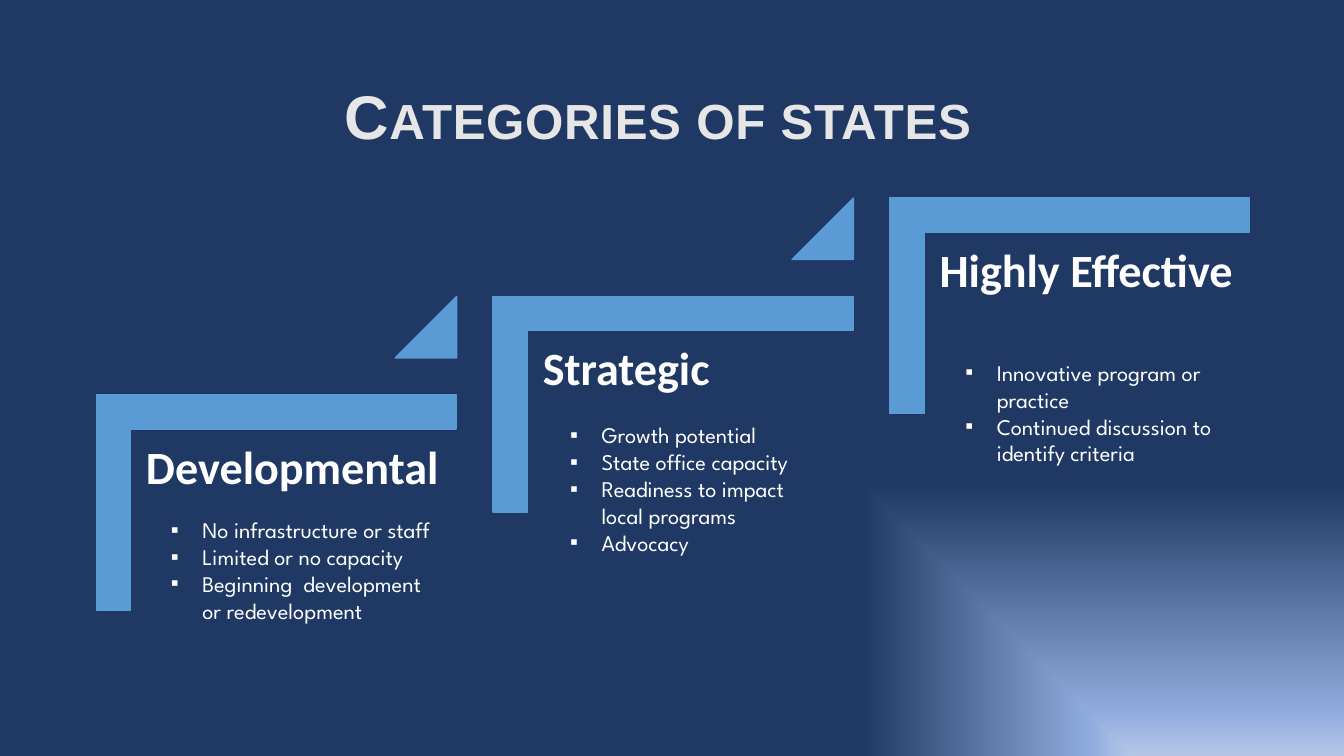
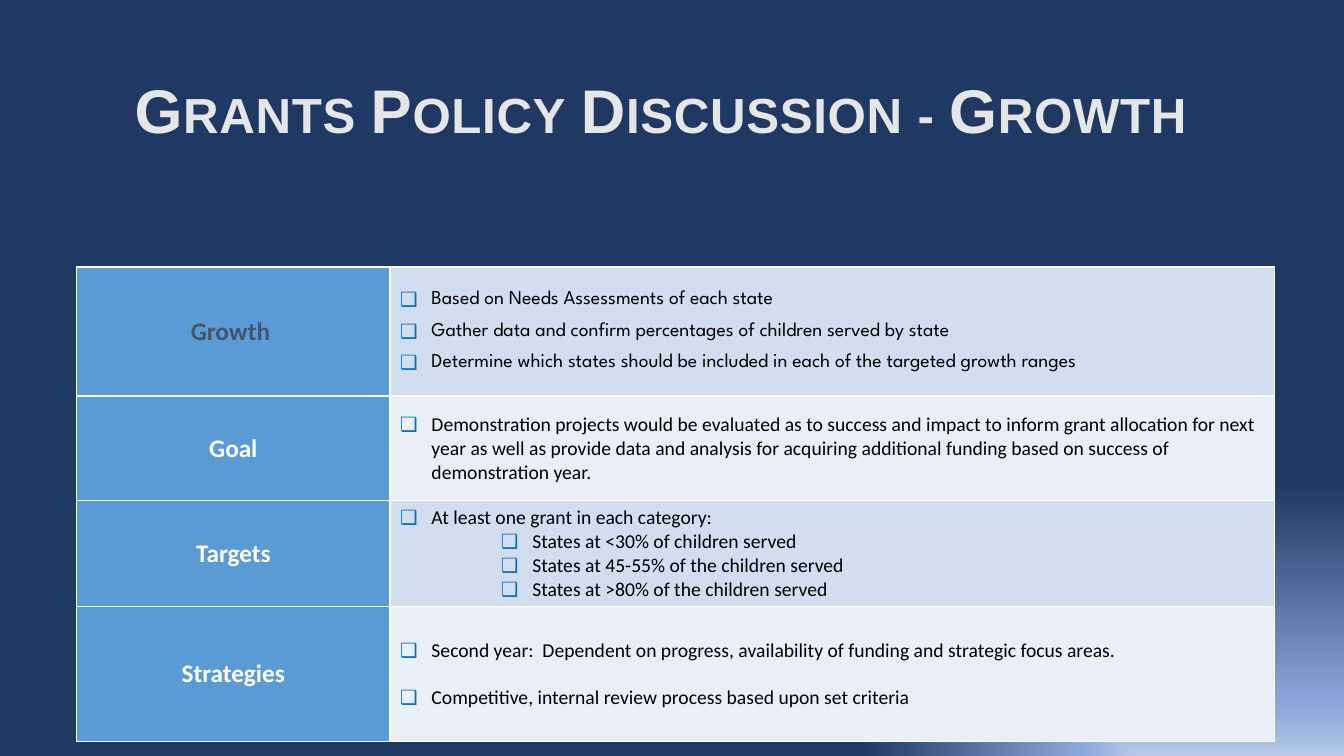
from lxml import etree
from pptx import Presentation
from pptx.dml.color import RGBColor
from pptx.enum.shapes import MSO_SHAPE
from pptx.enum.text import MSO_ANCHOR, MSO_AUTO_SIZE, PP_ALIGN
from pptx.oxml import parse_xml
from pptx.oxml.ns import nsdecls, qn
from pptx.util import Cm, Pt

CORNER = MSO_SHAPE.CORNER
TRIANGLE = MSO_SHAPE.ISOSCELES_TRIANGLE
CENTER = PP_ALIGN.CENTER
MIDDLE = MSO_ANCHOR.MIDDLE
FIT_NONE = MSO_AUTO_SIZE.NONE
FIT_SHAPE = MSO_AUTO_SIZE.SHAPE_TO_FIT_TEXT

COLORS = {
    "navy": "203864",
    "periwinkle": "8FAADC",
    "pale": "B4C7E7",
    "blue": "5B9BD5",
    "title": "E7E6E6",
    "white": "FFFFFF",
    "black": "000000",
    "slate": "44546A",
    "bullet": "0070C0",
    "band_dark": "D2DEEF",
    "band_light": "EAEFF7",
}
TITLE_FONT, HEADING_FONT, LIST_FONT = "Arial", "Calibri", "League Spartan"
HANGING = 0.79


def add_span(para, text, font, size, color, bold=False):
    span = para.add_run()
    span.text = text
    span.font.name = font
    span.font.size = Pt(size)
    span.font.bold = bold
    span.font.color.rgb = RGBColor.from_string(COLORS[color])
    return span


def set_bullet(para, symbol, left=HANGING, color=None):
    """Give the paragraph a hanging bullet whose text starts at left (cm)."""
    properties = para._p.get_or_add_pPr()
    properties.set("marL", str(Cm(left)))
    properties.set("indent", str(-Cm(HANGING)))
    if color:
        bullet_color = etree.SubElement(properties, qn("a:buClr"))
        etree.SubElement(bullet_color, qn("a:srgbClr"), val=COLORS[color])
    etree.SubElement(properties, qn("a:buFont"), typeface="Arial")
    etree.SubElement(properties, qn("a:buChar"), char=symbol)


deck = Presentation()
deck.slide_width, deck.slide_height = Cm(33.87), Cm(19.05)

# Shared background: a glow in the bottom right corner
background_fill = deck.slide_master.background.fill
background_fill.gradient()
stops = [(0, "pale"), (12, "periwinkle"), (72, "navy"), (83, "navy"), (100, "navy")]
stop_xml = "".join(
    f'<a:gs pos="{position * 1000}"><a:srgbClr val="{COLORS[color]}"/></a:gs>'
    for position, color in stops
)
gradient = parse_xml(
    f'<a:gradFill {nsdecls("a")} rotWithShape="1"><a:gsLst>{stop_xml}</a:gsLst>'
    '<a:path path="rect"><a:fillToRect l="100000" t="100000"/></a:path>'
    '<a:tileRect r="-100000" b="-100000"/></a:gradFill>'
)
old_gradient = next(deck.slide_master.element.iter(qn("a:gradFill")))
old_gradient.getparent().replace(old_gradient, gradient)

# Slides and titles
slides = []
for text, top, height in [
    ("Categories of states ", 1.45, 3.12),
    ("Grants Policy Discussion - Growth", 1.02, 3.68),
]:
    slide = deck.slides.add_slide(deck.slide_layouts[5])
    title = slide.shapes.title
    title.left, title.top, title.width, title.height = Cm(2.34), Cm(top), Cm(29.21), Cm(height)
    title.text_frame.vertical_anchor = MIDDLE
    title.text_frame.auto_size = FIT_NONE
    para = title.text_frame.paragraphs[0]
    para.alignment = CENTER
    para.line_spacing = 0.9
    span = add_span(para, text, TITLE_FONT, 44, "title", bold=True)
    span.font._element.set("cap", "small")
    span.font._element.set("spc", "50")
    slides.append(slide)
categories_slide, grants_slide = slides

# Slide 1: three rising steps
STEP_RIGHT, STEP_UP = 10, 2.48
steps = [
    ("Developmental", (4.06, 12.88, 7.11, 5.74), [
        "No infrastructure or staff",
        "Limited or no capacity",
        "Beginning  development or redevelopment",
    ]),
    ("Strategic", (14.12, 10.49, 6.93, 4.37), [
        "Growth potential",
        "State office capacity",
        "Readiness to impact local programs",
        "Advocacy",
    ]),
    ("Highly Effective", (24.08, 8.92, 7.24, 3), [
        "Innovative program or practice",
        "Continued discussion to identify criteria",
    ]),
]
for index, (heading, list_place, items) in enumerate(steps):
    left, top = 4.24 + index * STEP_RIGHT, 8.13 - index * STEP_UP
    shapes = categories_slide.shapes

    corner = shapes.add_shape(CORNER, Cm(left), Cm(top), Cm(5.44), Cm(9.07))
    corner.rotation = 90
    corner.adjustments[0] = corner.adjustments[1] = 0.16
    markers = [corner]
    if index < len(steps) - 1:
        triangle = shapes.add_shape(TRIANGLE, Cm(left + 5.72), Cm(top - 0.66), Cm(1.55), Cm(1.55))
        triangle.adjustments[0] = 1
        markers.append(triangle)
    for marker in markers:
        marker.shadow.inherit = False
        marker.fill.solid()
        marker.fill.fore_color.rgb = RGBColor.from_string(COLORS["blue"])
        marker.line.color.rgb = RGBColor.from_string(COLORS["blue"])
        marker.line.width = Pt(1)

    heading_box = shapes.add_textbox(Cm(left - 0.91), Cm(top + 2.72), Cm(8.18), Cm(7.16))
    frame = heading_box.text_frame
    frame.word_wrap = True
    frame.margin_left = frame.margin_right = frame.margin_top = frame.margin_bottom = Cm(0.35)
    frame.paragraphs[0].line_spacing = 0.9
    add_span(frame.paragraphs[0], heading, HEADING_FONT, 33, "white", bold=True)

    list_frame = shapes.add_textbox(*map(Cm, list_place)).text_frame
    list_frame.word_wrap = True
    list_frame.auto_size = FIT_SHAPE
    for number, item in enumerate(items):
        para = list_frame.add_paragraph() if number else list_frame.paragraphs[0]
        set_bullet(para, "▪")
        add_span(para, item, LIST_FONT, 16, "white")

# Slide 2: policy table
# Each row: label, label colour, height, list font, gap between items, (level, text) items
policy_rows = [
    ("Growth ", "slate", 3.25, LIST_FONT, 9.5, [
        (0, "Based on Needs Assessments of each state"),
        (0, "Gather data and confirm percentages of children served by state"),
        (0, "Determine which states should be included in each of the targeted growth ranges"),
    ]),
    ("Goal", "white", 2.64, HEADING_FONT, 0, [
        (0, "Demonstration projects would be evaluated as to success and impact to inform grant "
            "allocation for next year as well as provide data and analysis for acquiring "
            "additional funding based on success of demonstration year."),
    ]),
    ("Targets", "white", 2.67, HEADING_FONT, 0, [
        (0, "At least one grant in each category:"),
        (2, "States at <30% of children served"),
        (2, "States at 45-55% of the children served"),
        (2, "States at >80% of the children served"),
    ]),
    ("Strategies", "white", 3.4, HEADING_FONT, 17, [
        (0, "Second year:  Dependent on progress, availability of funding and strategic focus areas."),
        (0, "Competitive, internal review process based upon set criteria"),
    ]),
]
column_widths = [7.9, 22.28]
table_height = sum(row[2] for row in policy_rows)
table = grants_slide.shapes.add_table(
    len(policy_rows), 2, Cm(1.93), Cm(6.73), Cm(sum(column_widths)), Cm(table_height)
).table
table.first_row = table.horz_banding = False
for column, width in zip(table.columns, column_widths):
    column.width = Cm(width)

for index, (label, label_color, height, font, gap, items) in enumerate(policy_rows):
    table.rows[index].height = Cm(height)
    label_cell, list_cell = table.cell(index, 0), table.cell(index, 1)
    band = "band_light" if index % 2 else "band_dark"
    for cell, color in [(label_cell, "blue"), (list_cell, band)]:
        cell.vertical_anchor = MIDDLE
        for side in ("lnL", "lnR", "lnT", "lnB"):
            border = etree.SubElement(cell._tc.get_or_add_tcPr(), qn(f"a:{side}"), w=str(Pt(1)))
            border_fill = etree.SubElement(border, qn("a:solidFill"))
            etree.SubElement(border_fill, qn("a:srgbClr"), val=COLORS["white"])
        cell.fill.solid()
        cell.fill.fore_color.rgb = RGBColor.from_string(COLORS[color])

    para = label_cell.text_frame.paragraphs[0]
    para.alignment = CENTER
    add_span(para, label, HEADING_FONT, 18, label_color, bold=True)

    for number, (level, item) in enumerate(items):
        frame = list_cell.text_frame
        para = frame.add_paragraph() if number else frame.paragraphs[0]
        para.level = level
        if number:
            para.space_before = Pt(gap)
        set_bullet(para, "❑", HANGING + level * 1.27, "bullet")
        add_span(para, item, font, 14, "black")

deck.save("out.pptx")
